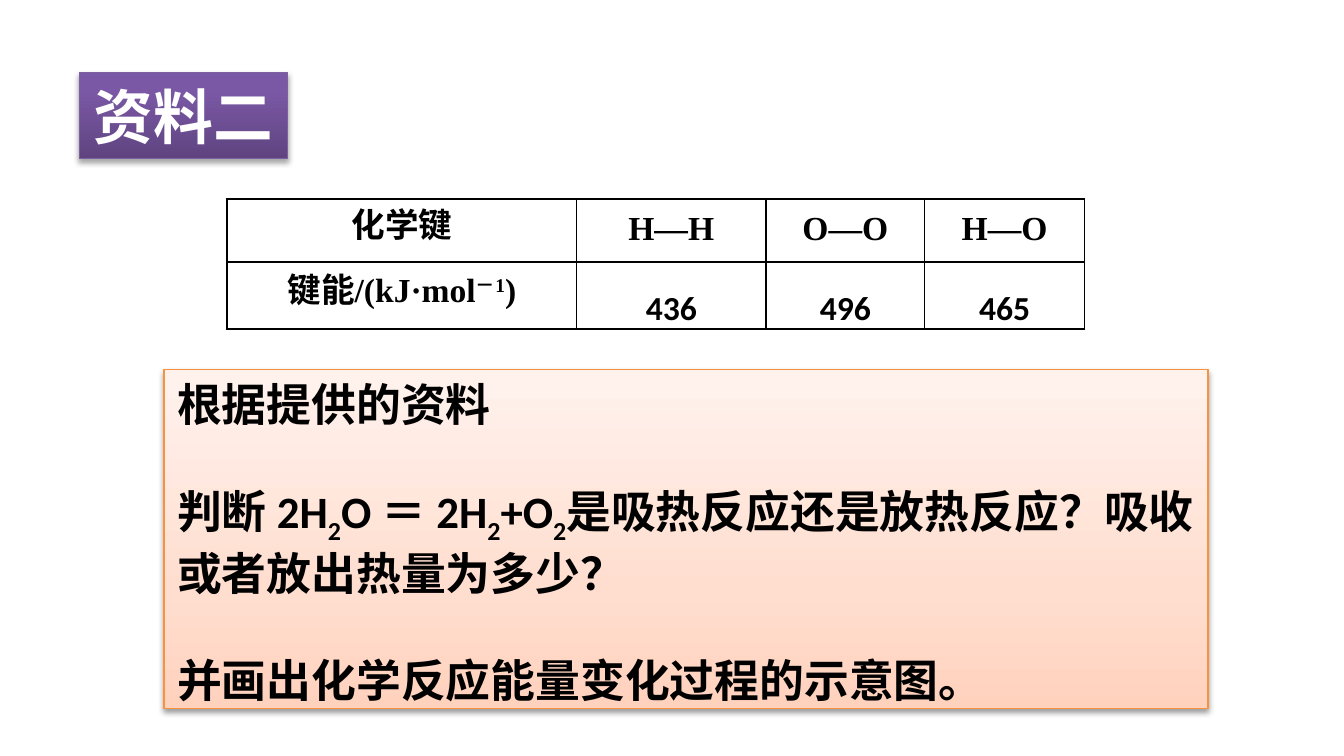
"""Build the bond energy slide with its table and question box."""
from lxml import etree
from pptx import Presentation
from pptx import util as u
from pptx.dml.color import RGBColor
from pptx.enum import shapes, text
from pptx.oxml import parse_xml

BLACK = RGBColor(0x00, 0x00, 0x00)
WHITE = RGBColor(0xFF, 0xFF, 0xFF)
ORANGE = RGBColor(0xF6, 0x92, 0x40)
PURPLE = RGBColor(0x7D, 0x60, 0xA0)
PEACH_STOPS = [(0, RGBColor(0xFF, 0xD2, 0xBD)), (35, RGBColor(0xFF, 0xDE, 0xD0)),
               (100, RGBColor(0xFF, 0xF2, 0xED))]
PURPLE_STOPS = [(0, RGBColor(0x5F, 0x44, 0x80)), (80, RGBColor(0x7B, 0x58, 0xA6)),
                (100, RGBColor(0x7C, 0x57, 0xA8))]
NS = "http://schemas.openxmlformats.org/drawingml/2006/main"


def style_panel(panel, stops, outline, shadow_distance, shadow_alpha):
    properties = panel.element.spPr
    gradient = "".join(f'<a:gs pos="{position * 1000}"><a:srgbClr val="{color}"/></a:gs>'
                       for position, color in stops)
    properties.append(parse_xml(
        f'<a:gradFill xmlns:a="{NS}" rotWithShape="1"><a:gsLst>{gradient}</a:gsLst>'
        '<a:lin ang="16200000" scaled="0"/></a:gradFill>'))
    panel.line.color.rgb = outline
    panel.line.width = u.Pt(0.75)
    properties.append(parse_xml(
        f'<a:effectLst xmlns:a="{NS}"><a:outerShdw blurRad="{u.Pt(3.1)}" '
        f'dist="{u.Pt(shadow_distance)}" dir="5400000" rotWithShape="0"><a:srgbClr val="000000">'
        f'<a:alpha val="{shadow_alpha * 1000}"/></a:srgbClr></a:outerShdw></a:effectLst>'))


def add_run(paragraph, words, size, face="Calibri", color=BLACK, baseline=0):
    run = paragraph.add_run()
    run.text = words
    run.font.size = u.Pt(size)
    run.font.name = face
    run.font.bold = True
    run.font.color.rgb = color
    if baseline:
        run.font._element.set("baseline", str(baseline * 1000))


prs = Presentation()
prs.slide_width = u.Inches(10)
prs.slide_height = prs.slide_width * 9 // 16
slide = prs.slides.add_slide(prs.slide_layouts[5])

heading = slide.shapes.title
heading.left, heading.top = u.Inches(0.59), u.Inches(0.54)
heading.width, heading.height = u.Inches(1.55), u.Inches(0.64)
style_panel(heading, PURPLE_STOPS, PURPLE, 1.8, 35)
heading.text_frame.word_wrap = False
heading.text_frame.auto_size = text.MSO_AUTO_SIZE.NONE
heading.text_frame.vertical_anchor = text.MSO_ANCHOR.TOP
heading.text_frame.paragraphs[0].alignment = text.PP_ALIGN.CENTER
add_run(heading.text_frame.paragraphs[0], "资料二", 32, color=WHITE)

question = slide.shapes.add_shape(shapes.MSO_SHAPE.RECTANGLE, u.Inches(1.22), u.Inches(2.75),
                                  u.Inches(7.77), u.Inches(2.52))
style_panel(question, PEACH_STOPS, ORANGE, 1.6, 38)
question_text = question.text_frame
question_text.word_wrap = True
question_text.auto_size = text.MSO_AUTO_SIZE.NONE
question_text.vertical_anchor = text.MSO_ANCHOR.TOP
question_lines = [
    [("根据提供的资料", 0)],
    [("判断 2H", 0), ("2", -25), ("O ＝ 2H", 0), ("2", -25), ("+O", 0), ("2", -25),
     ("是吸热反应还是放热反应？吸收或者放出热量为多少？", 0)],
    [("并画出化学反应能量变化过程的示意图。", 0)],
]
for index, line in enumerate(question_lines):
    paragraph = question_text.add_paragraph() if index else question_text.paragraphs[0]
    paragraph.alignment = text.PP_ALIGN.LEFT
    paragraph.space_before = u.Pt(29 if index else 0)
    for words, baseline in line:
        add_run(paragraph, words, 24, baseline=baseline)

bond_rows = [
    [[("化学键", 0)], [("H—H", 0)], [("O—O", 0)], [("H—O", 0)]],
    [[("键能/(kJ·mol", 0), ("－1", 30), (")", 0)], [("436", 0)], [("496", 0)], [("465", 0)]],
]
bonds = slide.shapes.add_table(2, 4, u.Inches(1.69), u.Inches(1.48),
                               u.Inches(6.38), u.Inches(0.97)).table
bonds.first_row = bonds.horz_banding = False
for column, width in zip(bonds.columns, (2.6, 1.41, 1.18, 1.19)):
    column.width = u.Inches(width)
for row, height in zip(bonds.rows, (0.47, 0.5)):
    row.height = u.Inches(height)

for row_index, bond_row in enumerate(bond_rows):
    for column_index, pieces in enumerate(bond_row):
        is_energy = row_index == 1 and column_index > 0
        cell = bonds.cell(row_index, column_index)
        cell.fill.background()
        cell.vertical_anchor = text.MSO_ANCHOR.MIDDLE
        cell.margin_left = cell.margin_right = u.Inches(0.07)
        cell.margin_top = u.Inches(0.25 if is_energy else 0)
        cell.margin_bottom = 0
        paragraph = cell.text_frame.paragraphs[0]
        paragraph.alignment = text.PP_ALIGN.CENTER
        paragraph.line_spacing = u.Pt(18)
        for words, baseline in pieces:
            add_run(paragraph, words, 18, "Calibri" if is_energy else "Times New Roman",
                    baseline=baseline)
        cell_properties = cell._tc.get_or_add_tcPr()
        for position, side in enumerate(("lnL", "lnR", "lnT", "lnB")):
            border = etree.Element(f"{{{NS}}}{side}", w=str(u.Pt(1)))
            border_fill = etree.SubElement(border, f"{{{NS}}}solidFill")
            etree.SubElement(border_fill, f"{{{NS}}}srgbClr", val=str(BLACK))
            cell_properties.insert(position, border)

prs.save("out.pptx")
